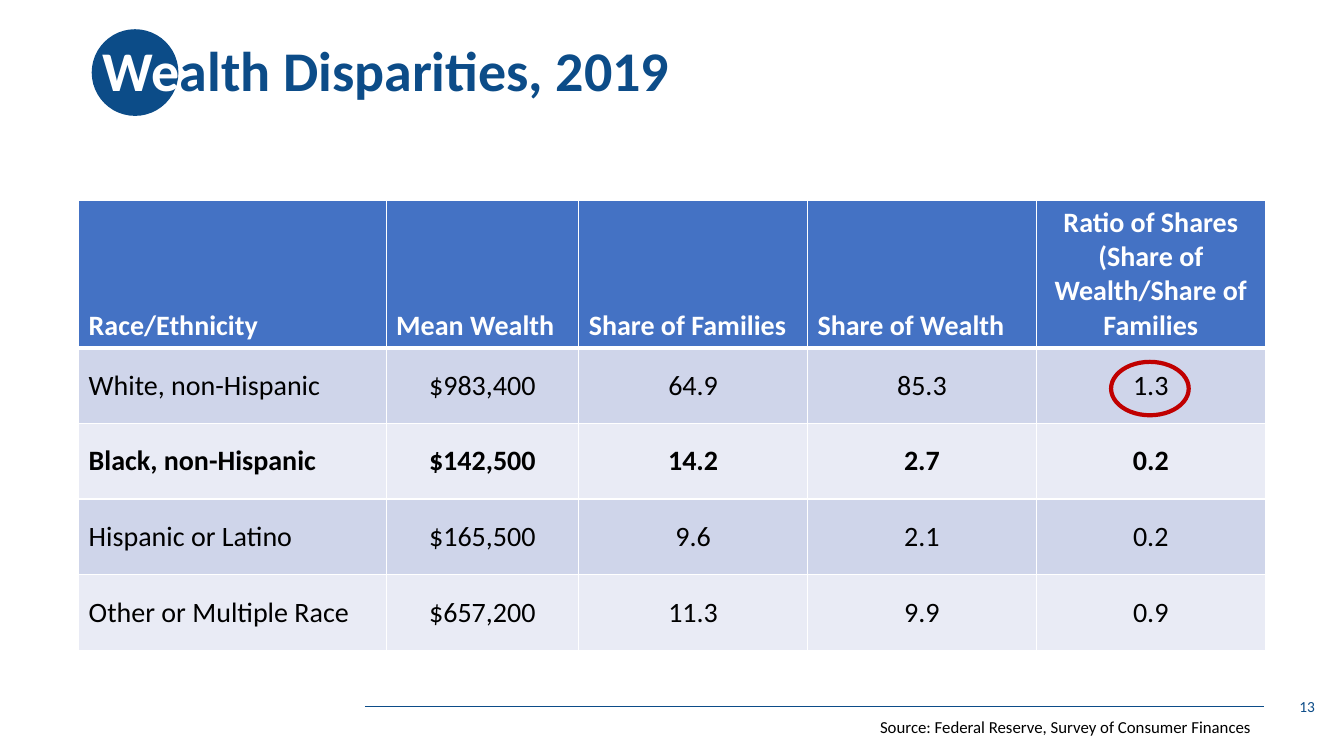
from lxml.etree import SubElement
from pptx import Presentation
from pptx.dml.color import RGBColor
from pptx.enum.shapes import MSO_CONNECTOR as Connector, MSO_SHAPE as Shape
from pptx.enum.text import MSO_ANCHOR as Anchor, MSO_AUTO_SIZE as AutoSize, PP_ALIGN as Align
from pptx.oxml.ns import qn
from pptx.util import Inches, Pt

NAVY, WHITE, BLACK, RED = "0C4C88", "FFFFFF", "000000", "C00000"
HEADER, BANDS = "4472C4", ["CFD5EA", "E9EBF5"]


def color(value):
    return RGBColor.from_string(value)


def add_run(paragraph, text, size, value, bold=False):
    run = paragraph.add_run()
    run.text = text
    run.font.name = "Calibri"
    run.font.size = Pt(size)
    run.font.bold = bold
    run.font.color.rgb = color(value)


presentation = Presentation()
presentation.slide_width = Inches(13.33)
presentation.slide_height = Inches(7.5)
slide = presentation.slides.add_slide(presentation.slide_layouts[5])
shapes = slide.shapes

footer_line = shapes.add_connector(
    Connector.STRAIGHT, Inches(3.62), Inches(7.01), Inches(12.54), Inches(7.01))
footer_line.line.color.rgb = color(NAVY)
footer_line.line.width = Pt(0.5)
SubElement(footer_line.element.spPr, qn("a:effectLst"))

title_circle = shapes.add_shape(Shape.OVAL, Inches(0.91), Inches(0.29), Inches(0.86), Inches(0.86))
title_circle.shadow.inherit = False
title_circle.fill.solid()
title_circle.fill.fore_color.rgb = color(NAVY)
title_circle.line.fill.background()

title = shapes.title
title_circle.element.addnext(title.element)
title.left, title.top = Inches(0.92), Inches(0)
title.width, title.height = Inches(11.5), Inches(1.45)
title.text_frame.auto_size = AutoSize.NONE
title.text_frame.vertical_anchor = Anchor.MIDDLE
paragraph = title.text_frame.paragraphs[0]
paragraph.alignment = Align.LEFT
paragraph.line_spacing = 0.9
add_run(paragraph, "We", 40, WHITE, True)
add_run(paragraph, "alth Disparities, 2019", 40, NAVY, True)

rows = [
    ["Race/Ethnicity", "Mean Wealth", "Share of Families", "Share of Wealth",
     "Ratio of Shares (Share of Wealth/Share of Families"],
    ["White, non-Hispanic", "$983,400", "64.9", "85.3", "1.3"],
    ["Black, non-Hispanic", "$142,500", "14.2", "2.7", "0.2"],
    ["Hispanic or Latino", "$165,500", "9.6", "2.1", "0.2"],
    ["Other or Multiple Race", "$657,200", "11.3", "9.9", "0.9"],
]
column_widths = [3.05, 1.91, 2.27, 2.27, 2.27]
table = shapes.add_table(
    len(rows), len(column_widths), Inches(0.78), Inches(1.99), Inches(11.77), Inches(4.45)).table
for column, width in zip(table.columns, column_widths):
    column.width = Inches(width)

for row_index, row in enumerate(rows):
    is_header = row_index == 0
    table.rows[row_index].height = Inches(1.45 if is_header else 0.75)
    for column_index, text in enumerate(row):
        cell = table.cell(row_index, column_index)
        properties = cell._tc.get_or_add_tcPr()
        for side in ["L", "R", "T", "B"]:
            thick = (is_header and side == "B") or (row_index == 1 and side == "T")
            border = SubElement(properties, qn(f"a:ln{side}"), w=str(Pt(3 if thick else 1)))
            border_fill = SubElement(border, qn("a:solidFill"))
            SubElement(border_fill, qn("a:srgbClr"), val=WHITE)
        cell.fill.solid()
        cell.fill.fore_color.rgb = color(HEADER if is_header else BANDS[(row_index - 1) % 2])
        cell.vertical_anchor = Anchor.BOTTOM if is_header else Anchor.MIDDLE
        paragraph = cell.text_frame.paragraphs[0]
        centered = column_index == 4 or (column_index > 0 and not is_header)
        paragraph.alignment = Align.CENTER if centered else Align.LEFT
        bold = is_header or row[0].startswith("Black")
        add_run(paragraph, text, 20, WHITE if is_header else BLACK, bold)

page_number = shapes.add_textbox(Inches(10.14), Inches(6.81), Inches(3), Inches(0.4))
page_number.text_frame.word_wrap = True
page_number.text_frame.vertical_anchor = Anchor.MIDDLE
paragraph = page_number.text_frame.paragraphs[0]
paragraph.alignment = Align.RIGHT
add_run(paragraph, "13", 11, NAVY)

ratio_ring = shapes.add_shape(Shape.OVAL, Inches(11.02), Inches(3.59), Inches(0.77), Inches(0.53))
ratio_ring.shadow.inherit = False
ratio_ring.fill.background()
ratio_ring.line.color.rgb = color(RED)
ratio_ring.line.width = Pt(3)

source = shapes.add_textbox(Inches(8.63), Inches(7.06), Inches(3.92), Inches(0.3))
source.text_frame.word_wrap = False
source.text_frame.auto_size = AutoSize.SHAPE_TO_FIT_TEXT
add_run(source.text_frame.paragraphs[0],
        "Source: Federal Reserve, Survey of Consumer Finances", 12, BLACK)

presentation.save("out.pptx")
